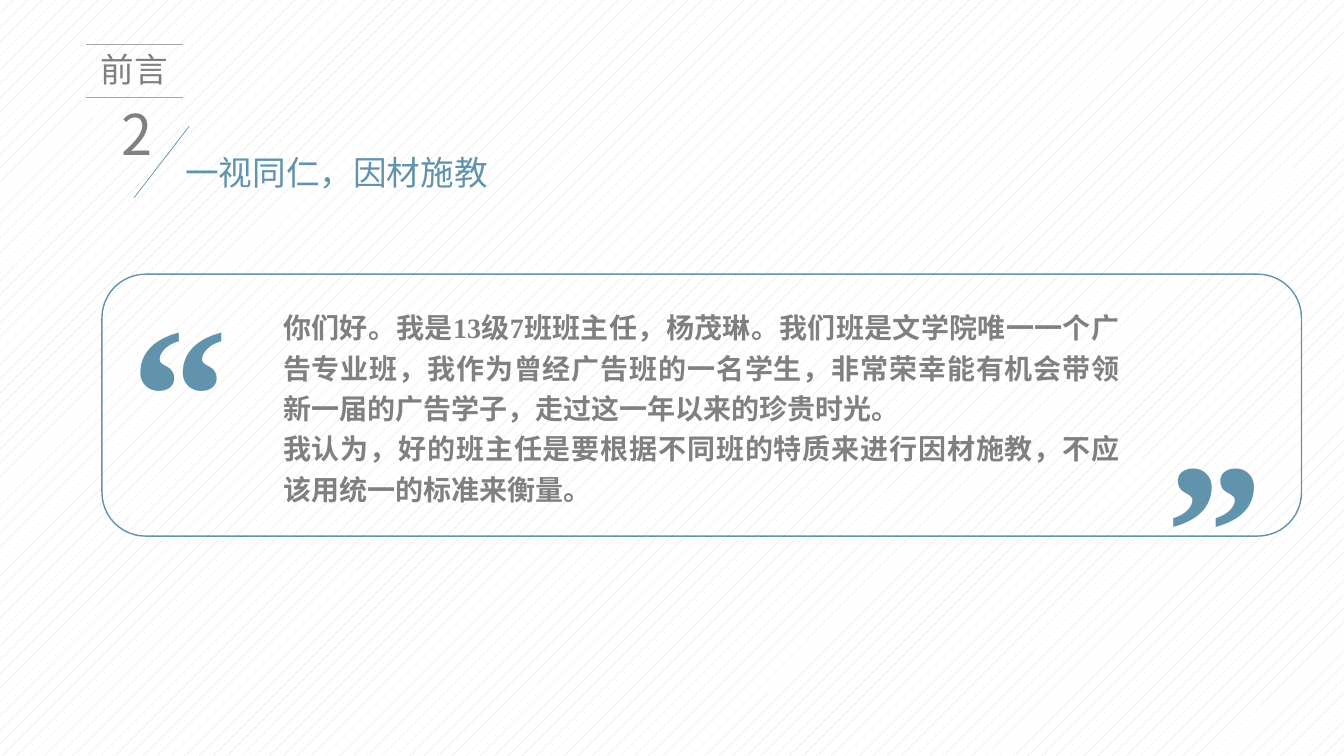
from lxml import etree
from pptx import Presentation
from pptx.dml.color import RGBColor
from pptx.enum.dml import MSO_PATTERN
from pptx.enum.shapes import MSO_CONNECTOR, MSO_SHAPE
from pptx.enum.text import MSO_ANCHOR, PP_ALIGN
from pptx.oxml.ns import qn
from pptx.util import Cm, Pt

SANS, SERIF = "Noto Sans CJK SC", "Times New Roman"
BLUE, GRAY, RULE_GRAY = "6193AC", "808080", "A6A6A6"


def color(hex_string):
    return RGBColor.from_string(hex_string)


def write(frame, text, size, ink, latin, east_asian, align, bold=False, spacing=1.0):
    """Fill a text frame and format every paragraph alike."""
    frame.text = text
    frame.word_wrap = True
    frame.vertical_anchor = MSO_ANCHOR.TOP
    for paragraph in frame.paragraphs:
        paragraph.alignment = align
        paragraph.line_spacing = spacing
        for run in paragraph.runs:
            font = run.font
            font.size, font.bold, font.name = Pt(size), bold, latin
            font.color.rgb = color(ink)
            ea = etree.SubElement(run._r.get_or_add_rPr(), qn("a:ea"))
            ea.set("typeface", east_asian)


prs = Presentation()
prs.slide_width, prs.slide_height = Cm(33.87), Cm(19.05)
slide = prs.slides.add_slide(prs.slide_layouts[6])
shapes = slide.shapes

backdrop = slide.background.fill
backdrop.patterned()
backdrop.pattern = MSO_PATTERN.PERCENT_5
backdrop.fore_color.rgb = color("D9D9D9")
backdrop.back_color.rgb = color("FFFFFF")

# Section heading: label between two rules, number, slash, title
for x1, y1, x2, y2, ink in [
    (4.77, 3.18, 3.38, 4.98, BLUE),
    (2.16, 1.11, 4.62, 1.11, RULE_GRAY),
    (2.16, 2.46, 4.62, 2.46, RULE_GRAY),
]:
    rule = shapes.add_connector(MSO_CONNECTOR.STRAIGHT, Cm(x1), Cm(y1), Cm(x2), Cm(y2))
    rule.line.color.rgb = color(ink)
    rule.line.width = Pt(0.5)
    etree.SubElement(rule._element.spPr, qn("a:effectLst"))

for text, left, top, width, height, size, ink, align in [
    ("一视同仁，因材施教", 4.42, 3.71, 8.89, 1.27, 24, BLUE, PP_ALIGN.LEFT),
    ("2", 2.82, 2.39, 1.07, 1.96, 40, GRAY, PP_ALIGN.LEFT),
    ("前言", 2.16, 1.11, 2.46, 1.27, 24, "7F7F7F", PP_ALIGN.CENTER),
]:
    heading = shapes.add_textbox(Cm(left), Cm(top), Cm(width), Cm(height))
    write(heading.text_frame, text, size, ink, SANS, SANS, align)

# Framed quotation
message = (
    "你们好。我是13级7班班主任，杨茂琳。我们班是文学院唯一一个广告专业班，"
    "我作为曾经广告班的一名学生，非常荣幸能有机会带领新一届的广告学子，"
    "走过这一年以来的珍贵时光。\n"
    "我认为，好的班主任是要根据不同班的特质来进行因材施教，不应该用统一的标准来衡量。"
)
for text, left, top, width, height, size, ink, east_asian in [
    ("“", 2.97, 5.36, 5.28, 6.91, 138, BLUE, SERIF),
    (message, 6.78, 7.44, 21.79, 5.54, 20, GRAY, SANS),
    ("”", 29.06, 8.81, 5.28, 6.91, 138, BLUE, SERIF),
]:
    quote = shapes.add_shape(
        MSO_SHAPE.ROUNDED_RECTANGLE, Cm(left), Cm(top), Cm(width), Cm(height))
    quote.adjustments[0] = 0.064
    quote.shadow.inherit = False
    quote.fill.background()
    quote.line.fill.background()
    write(quote.text_frame, text, size, ink, SERIF, east_asian,
          PP_ALIGN.JUSTIFY, bold=True, spacing=1.2)

frame = shapes.add_shape(
    MSO_SHAPE.ROUNDED_RECTANGLE, Cm(2.57), Cm(6.91), Cm(30.23), Cm(6.6))
frame.shadow.inherit = False
frame.fill.background()
frame.line.color.rgb = color(BLUE)
frame.line.width = Pt(1)

prs.save("out.pptx")
